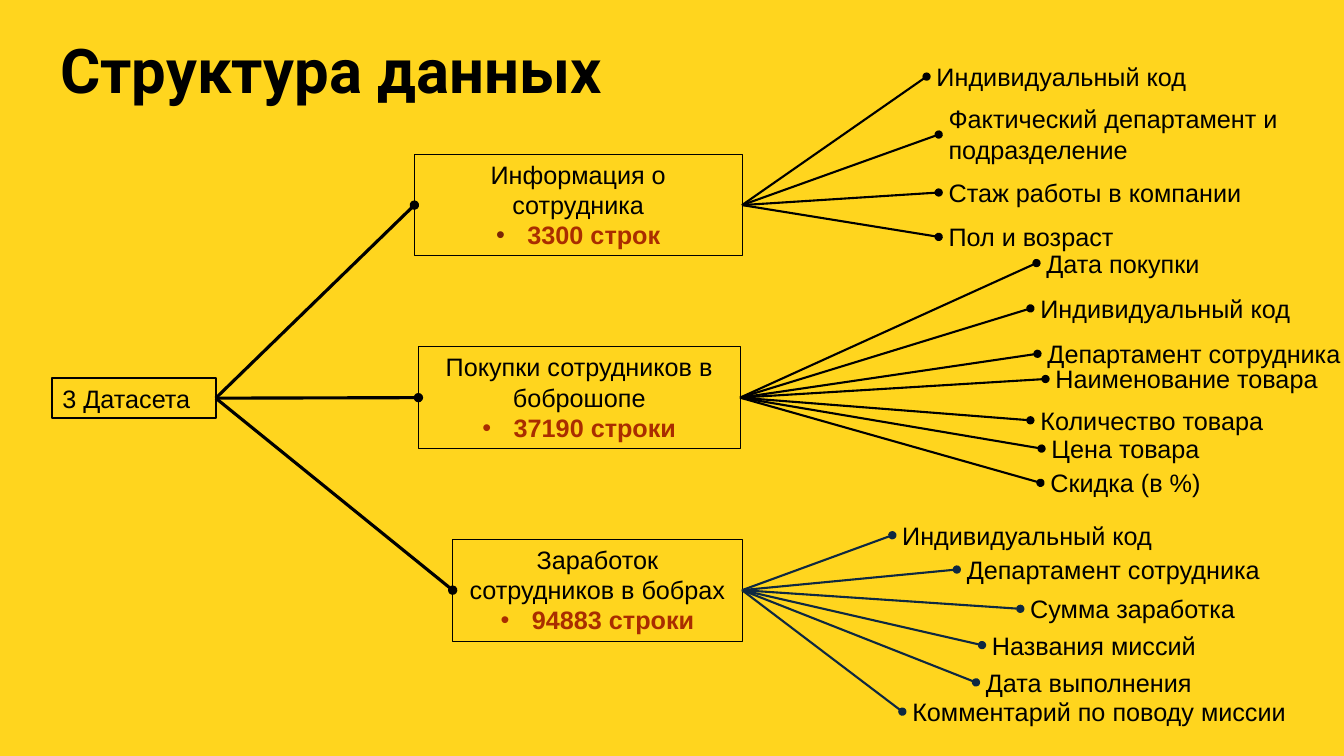
"""Build a slide with a tree of three datasets and their fields."""
from dataclasses import dataclass

from lxml.etree import SubElement
from pptx import Presentation
from pptx.dml.color import RGBColor
from pptx.enum.shapes import MSO_CONNECTOR, MSO_SHAPE
from pptx.enum.text import MSO_ANCHOR, MSO_AUTO_SIZE, PP_ALIGN
from pptx.oxml.ns import qn
from pptx.shapes.autoshape import Shape
from pptx.slide import Slide
from pptx.text.text import _Paragraph
from pptx.util import Inches, Pt

BLACK, YELLOW, RUST, BROWN, NAVY = "000000", "FFD51E", "A92D00", "7A2506", "0E2841"
LABEL_HEIGHT = 0.4
DATASET_HEIGHT = 1.01
RIGHT_SIDE, LEFT_SIDE = 3, 1


@dataclass
class Field:
    """A field label at the end of a branch."""
    text: str
    left: float
    top: float
    width: float
    height: float = LABEL_HEIGHT


@dataclass
class Dataset:
    """A dataset box with its row count and fields."""
    name: str
    rows: str
    left: float
    top: float
    width: float
    fields: list[Field]
    branch_color: str = BLACK
    bullet_color: str = RUST


DATASETS = [
    Dataset("Информация о сотрудника", "3300 строк", 4.11, 1.53, 3.25, [
        Field("Индивидуальный код", 9.19, 0.56, 3.04),
        Field("Фактический департамент и\nподразделение", 9.31, 0.98, 3.48, 0.71),
        Field("Стаж работы в компании", 9.31, 1.71, 3.75),
        Field("Пол и возраст", 9.31, 2.15, 2.87),
    ], bullet_color=BROWN),
    Dataset("Покупки сотрудников в боброшопе", "37190 строки", 4.15, 3.44, 3.19, [
        Field("Дата покупки", 10.28, 2.41, 2.37),
        Field("Индивидуальный код", 10.22, 2.86, 3.05),
        Field("Департамент сотрудника", 10.29, 3.31, 3.12),
        Field("Наименование товара", 10.37, 3.56, 2.95),
        Field("Количество товара", 10.22, 3.97, 2.88),
        Field("Цена товара", 10.33, 4.25, 2.09),
        Field("Скидка (в %)", 10.32, 4.59, 1.83),
    ]),
    Dataset("Заработок сотрудников в бобрах", "94883 строки", 4.49, 5.35, 2.87, [
        Field("Индивидуальный код", 8.85, 5.11, 3),
        Field("Департамент сотрудника", 9.49, 5.45, 3.48),
        Field("Сумма заработка", 10.12, 5.84, 2.23),
        Field("Названия миссий", 9.74, 6.2, 2.24),
        Field("Дата выполнения", 9.68, 6.57, 3),
        Field("Комментарий по поводу миссии", 8.95, 6.86, 4.56),
    ], branch_color=NAVY),
]


def rgb(value: str) -> RGBColor:
    """Turn a hex string into a colour."""
    return RGBColor.from_string(value)


def write(shape: Shape, text: str, size: float = 18, font: str = "Arial",
          bold: bool = False) -> None:
    """Put black text into a shape."""
    frame = shape.text_frame
    frame.text = text
    frame.word_wrap = True
    frame.vertical_anchor = MSO_ANCHOR.TOP
    frame.auto_size = MSO_AUTO_SIZE.SHAPE_TO_FIT_TEXT
    for paragraph in frame.paragraphs:
        paragraph.alignment = PP_ALIGN.LEFT
        for run in paragraph.runs:
            run.font.size = Pt(size)
            run.font.name = font
            run.font.bold = bold
            run.font.color.rgb = rgb(BLACK)


def add_bullet(paragraph: _Paragraph, color: str) -> None:
    """Give a paragraph a coloured bullet with a hanging indent."""
    properties = paragraph._p.get_or_add_pPr()
    properties.set("marL", str(Inches(0.31)))
    properties.set("indent", str(Inches(-0.31)))
    bullet_color = SubElement(properties, qn("a:buClr"))
    SubElement(bullet_color, qn("a:srgbClr"), val=color)
    SubElement(properties, qn("a:buFont"), typeface="Arial")
    SubElement(properties, qn("a:buChar"), char="•")


def add_box(slide: Slide, text: str, left: float, top: float, width: float,
            height: float, line_width: float) -> Shape:
    """Add an unfilled outlined rectangle with text."""
    box = slide.shapes.add_shape(MSO_SHAPE.RECTANGLE, Inches(left), Inches(top),
                                 Inches(width), Inches(height))
    box.shadow.inherit = False
    box.fill.background()
    box.line.color.rgb = rgb(BLACK)
    box.line.width = Pt(line_width)
    write(box, text)
    return box


def add_label(slide: Slide, field: Field) -> Shape:
    """Add a field label."""
    label = slide.shapes.add_textbox(Inches(field.left), Inches(field.top),
                                     Inches(field.width), Inches(field.height))
    write(label, field.text)
    return label


def add_branch(slide: Slide, parent: Shape, child: Shape, color: str,
               width: float) -> None:
    """Join the parent's right side to the child's left side, ending in a dot."""
    branch = slide.shapes.add_connector(MSO_CONNECTOR.STRAIGHT, 0, 0, 0, 0)
    branch.begin_connect(parent, RIGHT_SIDE)
    branch.end_connect(child, LEFT_SIDE)
    branch.line.color.rgb = rgb(color)
    branch.line.width = Pt(width)
    SubElement(branch.line._get_or_add_ln(), qn("a:tailEnd"), type="oval")
    SubElement(branch._element.spPr, qn("a:effectLst"))


def add_dataset(slide: Slide, root: Shape, dataset: Dataset) -> None:
    """Add a dataset box, its fields and all its branches."""
    box = add_box(slide, f"{dataset.name}\n{dataset.rows}", dataset.left, dataset.top,
                  dataset.width, DATASET_HEIGHT, 0.75)
    name, rows = box.text_frame.paragraphs
    name.alignment = rows.alignment = PP_ALIGN.CENTER
    add_bullet(rows, dataset.bullet_color)
    rows.runs[0].font.bold = True
    rows.runs[0].font.color.rgb = rgb(RUST)
    add_branch(slide, root, box, BLACK, 2.25)
    for field in dataset.fields:
        add_branch(slide, box, add_label(slide, field), dataset.branch_color, 1.5)


def add_title(slide: Slide) -> None:
    """Add the slide title."""
    title = slide.shapes.add_textbox(0, 0, Inches(7.33), Inches(1.45))
    write(title, "Структура данных", 44, "Roboto", True)
    title.text_frame.auto_size = MSO_AUTO_SIZE.NONE
    title.text_frame.vertical_anchor = MSO_ANCHOR.MIDDLE
    paragraph = title.text_frame.paragraphs[0]
    paragraph.line_spacing = 0.9
    paragraph._p.get_or_add_pPr().set("indent", str(Inches(0.5)))


def main() -> None:
    """Build and save the presentation."""
    presentation = Presentation()
    presentation.slide_width = Inches(13.33)
    presentation.slide_height = Inches(7.5)
    slide = presentation.slides.add_slide(presentation.slide_layouts[6])
    slide.background.fill.solid()
    slide.background.fill.fore_color.rgb = rgb(YELLOW)
    add_title(slide)
    root = add_box(slide, "3 Датасета", 0.52, 3.75, 1.62, LABEL_HEIGHT, 1.5)
    for dataset in DATASETS:
        add_dataset(slide, root, dataset)
    presentation.save("out.pptx")


if __name__ == "__main__":
    main()
